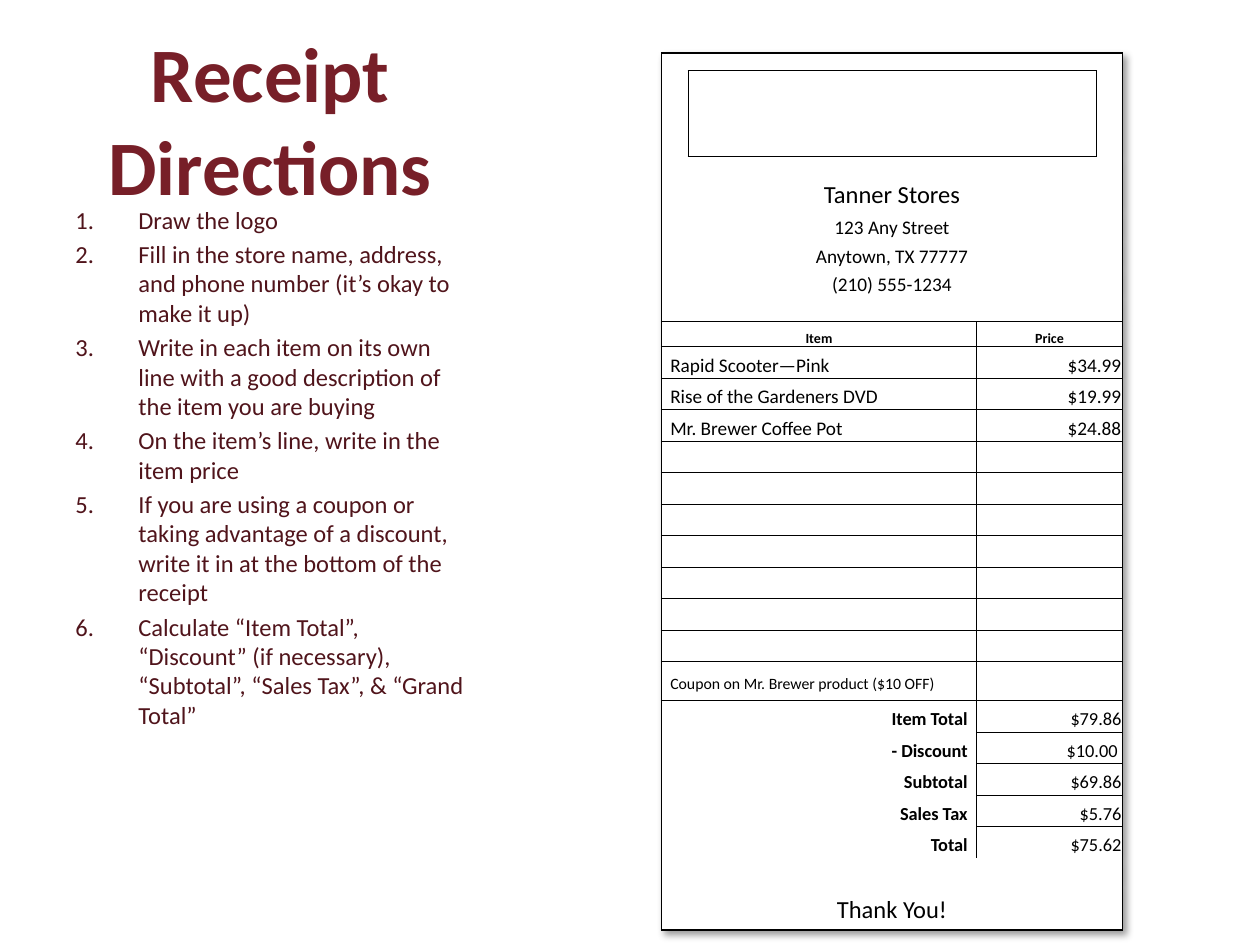
from lxml import etree
from pptx import Presentation
from pptx.dml.color import RGBColor
from pptx.enum.text import MSO_ANCHOR, PP_ALIGN
from pptx.oxml.ns import qn
from pptx.util import Emu, Inches, Pt

LEFT, CENTER, RIGHT = PP_ALIGN.LEFT, PP_ALIGN.CENTER, PP_ALIGN.RIGHT
TOP, MIDDLE, BOTTOM = MSO_ANCHOR.TOP, MSO_ANCHOR.MIDDLE, MSO_ANCHOR.BOTTOM
FONT = "Calibri"
NO_STYLE = "{2D5ABB26-0587-4C30-8999-92F81FD0307C}"
THIN, THICK = 0.5, 1
EDGE_TAGS = {"l": "a:lnL", "r": "a:lnR", "t": "a:lnT", "b": "a:lnB"}

COLS = [0.21, 2.29, 0.95, 0.21]
ROWS = ([0.14, 0.68, 0.14, 0.25] + [0.2] * 5 + [0.25] * 10
        + [0.31] + [0.25] * 5 + [0.2, 0.37])
LABEL, PRICE, FULL = (0, 1), (2, 3), (0, 3)

DIRECTIONS = [
    "Draw the logo",
    "Fill in the store name, address, and phone number (it’s okay to make it up)",
    "Write in each item on its own line with a good description of the item you are buying",
    "On the item’s line, write in the item price",
    "If you are using a coupon or taking advantage of a discount, "
    "write it in at the bottom of the receipt",
    "Calculate “Item Total”, “Discount” (if necessary), “Subtotal”, "
    "“Sales Tax”, & “Grand Total”",
]
STORE = [("Tanner Stores", 14), ("123 Any Street", 11),
         ("Anytown, TX 77777", 11), ("(210) 555-1234", 11)]
ITEMS = [("Rapid Scooter—Pink", "$34.99"),
         ("Rise of the Gardeners DVD", "$19.99"),
         ("Mr. Brewer Coffee Pot", "$24.88")] + [("", "")] * 7
COUPON = "Coupon on Mr. Brewer product ($10 OFF)"
TOTALS = [("Item Total", "$79.86"), ("- Discount", "$10.00"),
          ("Subtotal", "$69.86"), ("Sales Tax", "$5.76"), ("Total", "$75.62")]


def rgb(value):
    return RGBColor.from_string(value)


def add_run(p, text, size, color="000000", bold=False):
    r = p.add_run()
    r.text = text
    r.font.name, r.font.size, r.font.bold = FONT, Pt(size), bold
    r.font.color.rgb = rgb(color)


def add_box(prs, s, x, y, w, h, anchor):
    """Text box placed by shares of the slide's size."""
    sp = s.shapes.add_textbox(Emu(int(prs.slide_width * x)), Emu(int(prs.slide_height * y)),
                              Emu(int(prs.slide_width * w)), Emu(int(prs.slide_height * h)))
    tf = sp.text_frame
    tf.word_wrap = True
    tf.vertical_anchor = anchor
    return tf


def add_numbered_list(tf, items, size, color):
    for i, text in enumerate(items):
        p = tf.add_paragraph() if i else tf.paragraphs[0]
        pPr = p._p.get_or_add_pPr()
        pPr.set("marL", str(Inches(0.5)))
        pPr.set("indent", str(-Inches(0.5)))
        etree.SubElement(pPr, qn("a:buAutoNum"), type="arabicPeriod")
        if i:
            p.space_before = Pt(size * 0.2)
        add_run(p, text, size, color)


def set_borders(cell, widths):
    tcPr = cell._tc.get_or_add_tcPr()
    for side, tag in EDGE_TAGS.items():
        width = widths.get(side, 0)
        ln = etree.SubElement(tcPr, qn(tag), w=str(Pt(width)))
        if width:
            fill = etree.SubElement(ln, qn("a:solidFill"))
            etree.SubElement(fill, qn("a:srgbClr"), val="000000")
        else:
            etree.SubElement(ln, qn("a:noFill"))


def fill_cell(table, row, span, borders, text="", size=4, bold=False,
              align=LEFT, anchor=MIDDLE, left=0.01, right=0.01):
    """Merge a span of columns in one row, then style it and add its text."""
    first, last = span
    cell = table.cell(row, first)
    if last > first:
        cell.merge(table.cell(row, last))
    for col in range(first, last + 1):
        part = table.cell(row, col)
        part.margin_left, part.margin_right = Inches(left), Inches(right)
        part.margin_top, part.margin_bottom = Inches(0.01), 0
        set_borders(part, {k: w for k, w in borders.items() if k != "l" or col == first})
        part.fill.solid()
        part.fill.fore_color.rgb = rgb("FFFFFF")
        if col > first or not text:
            etree.SubElement(part.text_frame.paragraphs[0]._p, qn("a:endParaRPr"), sz="400")
    cell.vertical_anchor = anchor
    if text:
        p = cell.text_frame.paragraphs[0]
        p.alignment, p.line_spacing = align, 1.19
        add_run(p, text, size, bold=bold)


def add_shadow(table):
    effects = etree.Element(qn("a:effectLst"))
    shadow = etree.SubElement(effects, qn("a:outerShdw"), blurRad=str(Pt(4)),
                              dist=str(Pt(3)), dir="2700000", algn="tl", rotWithShape="0")
    color = etree.SubElement(shadow, qn("a:prstClr"), val="black")
    etree.SubElement(color, qn("a:alpha"), val="40000")
    table._tbl.tblPr.insert(0, effects)


def add_receipt_table(prs, s):
    sp = s.shapes.add_table(len(ROWS), len(COLS), Emu(int(prs.slide_width * 0.525)),
                            Emu(int(prs.slide_height * 0.056)),
                            Inches(sum(COLS)), Inches(sum(ROWS)))
    table = sp.table
    table.first_row = table.horz_banding = False
    table._tbl.tblPr.find(qn("a:tableStyleId")).text = NO_STYLE
    for col, width in zip(table.columns, COLS):
        col.width = Inches(width)
    for row, height in zip(table.rows, ROWS):
        row.height = Inches(height)
    add_shadow(table)
    return table


def fill_header(table):
    for row, side in ((0, {"t": THICK}), (2, {})):
        edge = {"b": THIN} if row == 0 else {"t": THIN}
        fill_cell(table, row, (0, 0), {"l": THICK, **side})
        for col in (1, 2):
            fill_cell(table, row, (col, col), {**side, **edge})
        fill_cell(table, row, (3, 3), {"r": THICK, **side})
    fill_cell(table, 1, (0, 0), {"l": THICK, "r": THIN})
    fill_cell(table, 1, (1, 2), dict.fromkeys("lrtb", THIN))
    fill_cell(table, 1, (3, 3), {"l": THIN, "r": THICK})
    sides = {"l": THICK, "r": THICK}
    for row, (text, size) in enumerate(STORE, start=3):
        fill_cell(table, row, FULL, sides, text, size, align=CENTER, anchor=BOTTOM)
    fill_cell(table, 7, FULL, {**sides, "b": THIN})


def fill_items(table):
    label = {"l": THICK, "r": THIN, "t": THIN, "b": THIN}
    price = {"l": THIN, "r": THICK, "t": THIN, "b": THIN}
    for span, borders, text in ((LABEL, label, "Item"), (PRICE, price, "Price")):
        fill_cell(table, 8, span, borders, text, 8, True, CENTER, BOTTOM)
    for row, (name, amount) in enumerate(ITEMS, start=9):
        fill_cell(table, row, LABEL, label, name, 11, left=0.07)
        fill_cell(table, row, PRICE, price, amount, 11, align=RIGHT)
    fill_cell(table, 19, LABEL, label, COUPON, 9, left=0.07)
    fill_cell(table, 19, PRICE, price)


def fill_totals(table):
    for i, (name, amount) in enumerate(TOTALS):
        label = {"l": THICK, "r": THIN, "t": 0 if i else THIN}
        price = {"l": THIN, "r": THICK, "t": THIN,
                 "b": THIN if i < len(TOTALS) - 1 else 0}
        fill_cell(table, 20 + i, LABEL, label, name, 10.5, True, RIGHT, right=0.07)
        fill_cell(table, 20 + i, PRICE, price, amount, 10.5, align=RIGHT,
                  right=0.04 if name == "- Discount" else 0.01)
    sides = {"l": THICK, "r": THICK}
    fill_cell(table, 25, FULL, sides)
    fill_cell(table, 26, FULL, {**sides, "b": THICK}, "Thank You!", 14, align=CENTER)


def main():
    prs = Presentation()
    prs.slide_width, prs.slide_height = Inches(10), Inches(7.5)
    s = prs.slides.add_slide(prs.slide_layouts[6])

    title = add_box(prs, s, 0.05, 0.04, 0.329, 0.17, MIDDLE)
    title.paragraphs[0].alignment = CENTER
    add_run(title.paragraphs[0], "Receipt Directions", 44, "771F28", True)
    body = add_box(prs, s, 0.05, 0.21, 0.329, 0.684, TOP)
    add_numbered_list(body, DIRECTIONS, 14, "50141B")

    table = add_receipt_table(prs, s)
    fill_header(table)
    fill_items(table)
    fill_totals(table)
    prs.save("out.pptx")


if __name__ == "__main__":
    main()
